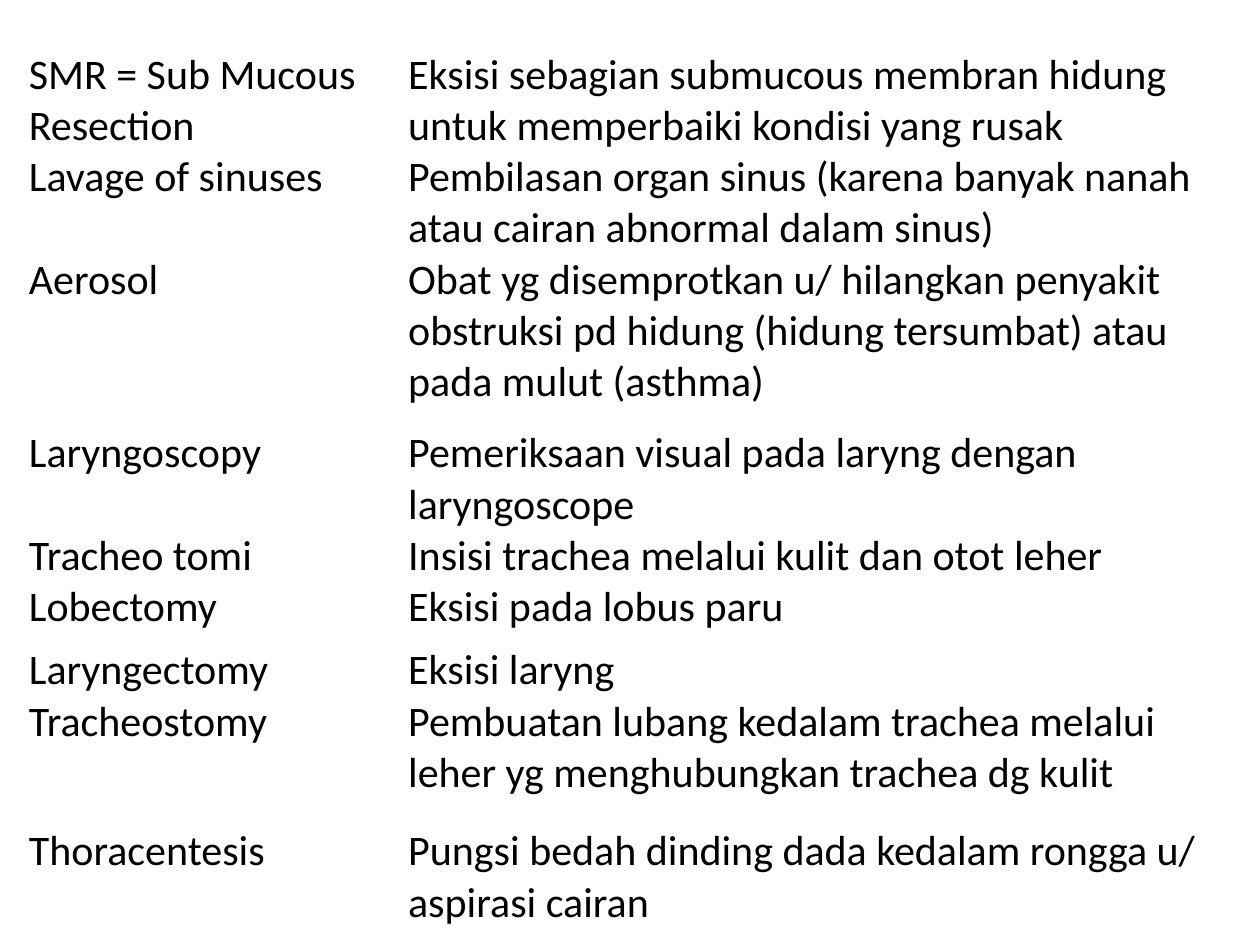
from dataclasses import dataclass

from lxml.etree import SubElement
from pptx import Presentation
from pptx.dml.color import RGBColor
from pptx.oxml.ns import qn
from pptx.util import Inches, Pt


@dataclass(frozen=True)
class Theme:
    font: str = "Calibri"
    size: int = 24
    text: str = "000000"
    paper: str = "FFFFFF"
    border: float = 1
    header_border: float = 3


@dataclass(frozen=True)
class Term:
    name: str
    meaning: str
    height: float


THEME = Theme()
SLIDE_W, SLIDE_H = 10, 7.5
LEFT, TOP = 0.16, 0.39
COLUMNS = (3.01, 6.68)
PAD = 0.07
TWO_LINES = 0.79
ONE_LINE = 0.4
TALL = 1.03

TERMS = [
    Term("SMR = Sub Mucous Resection",
         "Eksisi sebagian submucous membran hidung untuk memperbaiki kondisi yang rusak",
         TWO_LINES),
    Term("Lavage of sinuses",
         "Pembilasan organ sinus (karena banyak nanah atau cairan abnormal dalam sinus)",
         TWO_LINES),
    Term("Aerosol",
         "Obat yg disemprotkan u/ hilangkan penyakit obstruksi pd hidung "
         "(hidung tersumbat) atau pada mulut (asthma)",
         1.38),
    Term("Laryngoscopy", "Pemeriksaan visual pada laryng dengan laryngoscope", TWO_LINES),
    Term("Tracheo tomi", "Insisi trachea melalui kulit dan otot leher", ONE_LINE),
    Term("Lobectomy", "Eksisi pada lobus paru", 0.5),
    Term("Laryngectomy", "Eksisi laryng", ONE_LINE),
    Term("Tracheostomy",
         "Pembuatan lubang kedalam trachea melalui leher yg menghubungkan trachea dg kulit",
         TALL),
    Term("Thoracentesis",
         "Pungsi bedah dinding dada kedalam rongga u/ aspirasi cairan",
         TALL),
]


def set_borders(cell, bottom: float) -> None:
    tc_pr = cell._tc.get_or_add_tcPr()
    widths = {"a:lnL": THEME.border, "a:lnR": THEME.border,
              "a:lnT": THEME.border, "a:lnB": bottom}
    for tag, width in widths.items():
        ln = SubElement(tc_pr, qn(tag), w=str(Pt(width)))
        fill = SubElement(ln, qn("a:solidFill"))
        SubElement(fill, qn("a:srgbClr"), val=THEME.paper)


def write_cell(cell, text: str, bottom: float) -> None:
    set_borders(cell, bottom)
    cell.fill.background()
    cell.margin_left = cell.margin_right = Inches(PAD)
    cell.margin_top = cell.margin_bottom = 0
    p = cell.text_frame.paragraphs[0]
    p.text = text
    font = p.runs[0].font
    font.name, font.size, font.bold = THEME.font, Pt(THEME.size), False
    font.color.rgb = RGBColor.from_string(THEME.text)


def add_glossary(slide, terms: list[Term]) -> None:
    height = sum(term.height for term in terms)
    table = slide.shapes.add_table(
        len(terms), len(COLUMNS), Inches(LEFT), Inches(TOP),
        Inches(sum(COLUMNS)), Inches(height)).table
    table.first_row = table.horz_banding = False
    for column, width in zip(table.columns, COLUMNS):
        column.width = Inches(width)
    for i, (row, term) in enumerate(zip(table.rows, terms)):
        row.height = Inches(term.height)
        bottom = THEME.header_border if i == 0 else THEME.border
        for cell, text in zip(row.cells, (term.name, term.meaning)):
            write_cell(cell, text, bottom)


def main() -> None:
    prs = Presentation()
    prs.slide_width, prs.slide_height = Inches(SLIDE_W), Inches(SLIDE_H)
    slide = prs.slides.add_slide(prs.slide_layouts[6])
    add_glossary(slide, TERMS)
    prs.save("out.pptx")


if __name__ == "__main__":
    main()
